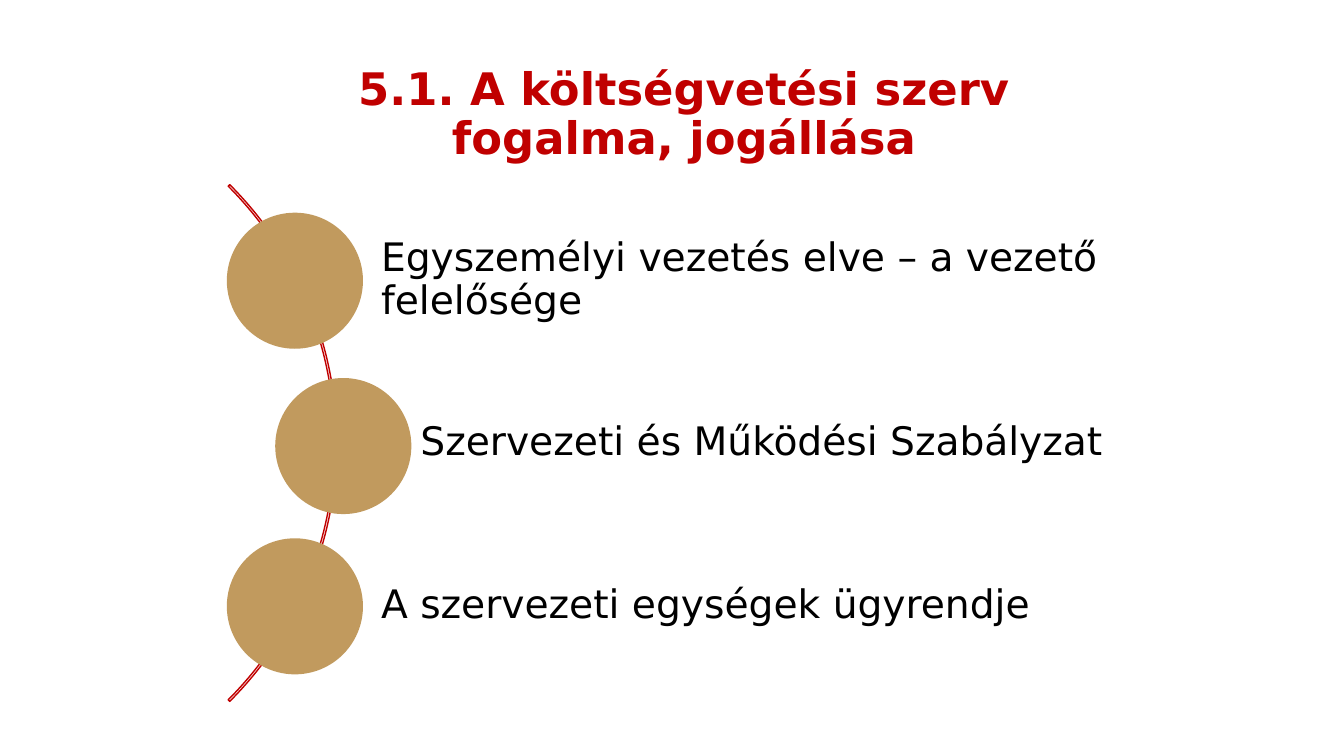
"""Build the slide on the concept and legal status of a budgetary organ."""
from pptx import Presentation
from pptx.dml.color import RGBColor
from pptx.enum.shapes import MSO_SHAPE
from pptx.enum.text import MSO_ANCHOR, PP_ALIGN
from pptx.util import Inches, Pt

COLORS = {"red": "C00000", "gold": "C19A5E", "black": "000000"}

presentation = Presentation()
presentation.slide_width = Inches(13.33)
presentation.slide_height = Inches(7.5)
slide = presentation.slides.add_slide(presentation.slide_layouts[6])
column = presentation.slide_width / 100
row = presentation.slide_height / 100


def place(left, top, width, height):
    """Turn grid columns and rows into slide lengths."""
    return [round(length) for length in (left * column, top * row, width * column, height * row)]


def add_text(text, *, box, size, color, bold=False, align=PP_ALIGN.LEFT, inset=0.75):
    """Add a vertically centred text box."""
    frame = slide.shapes.add_textbox(*place(*box)).text_frame
    frame.word_wrap = True
    frame.vertical_anchor = MSO_ANCHOR.MIDDLE
    frame.margin_left = round(inset * column)
    paragraph = frame.paragraphs[0]
    paragraph.text = text
    paragraph.alignment = align
    paragraph.line_spacing = 0.9
    paragraph.font.name = "DejaVu Sans"
    paragraph.font.size = Pt(size)
    paragraph.font.bold = bold
    paragraph.font.color.rgb = RGBColor.from_string(COLORS[color])


add_text("5.1. A költségvetési szerv fogalma, jogállása", box=(20.63, 8.93, 60.54, 12.67),
         size=32, color="red", bold=True, align=PP_ALIGN.CENTER)

arc = slide.shapes.add_shape(MSO_SHAPE.BLOCK_ARC, *place(-29.33, 10.27, 54.39, 96.67))
for index, adjustment in enumerate((189, 27, 0.003)):
    arc.adjustments[index] = adjustment
arc.shadow.inherit = False
arc.fill.background()
arc.line.color.rgb = RGBColor.from_string(COLORS["red"])
arc.line.width = Pt(1)

text_right, text_top, text_pitch = 84.92, 29.87, 21.53
topics = [
    ("Egyszemélyi vezetés elve – a vezető felelősége", 16.88, 28.13, 21.98),
    ("Szervezeti és Működési Szabályzat", 20.48, 50, 24.91),
    ("A szervezeti egységek ügyrendje", 16.88, 71.2, 21.98),
]
for index, (topic, circle_left, circle_top, text_left) in enumerate(topics):
    add_text(topic, box=(text_left, text_top + index * text_pitch, text_right - text_left, 14.4),
             size=28, color="black", inset=6.38)
    circle = slide.shapes.add_shape(MSO_SHAPE.OVAL, *place(circle_left, circle_top, 10.13, 18))
    circle.shadow.inherit = False
    circle.fill.solid()
    circle.fill.fore_color.rgb = RGBColor.from_string(COLORS["gold"])
    circle.line.fill.background()

presentation.save("out.pptx")
